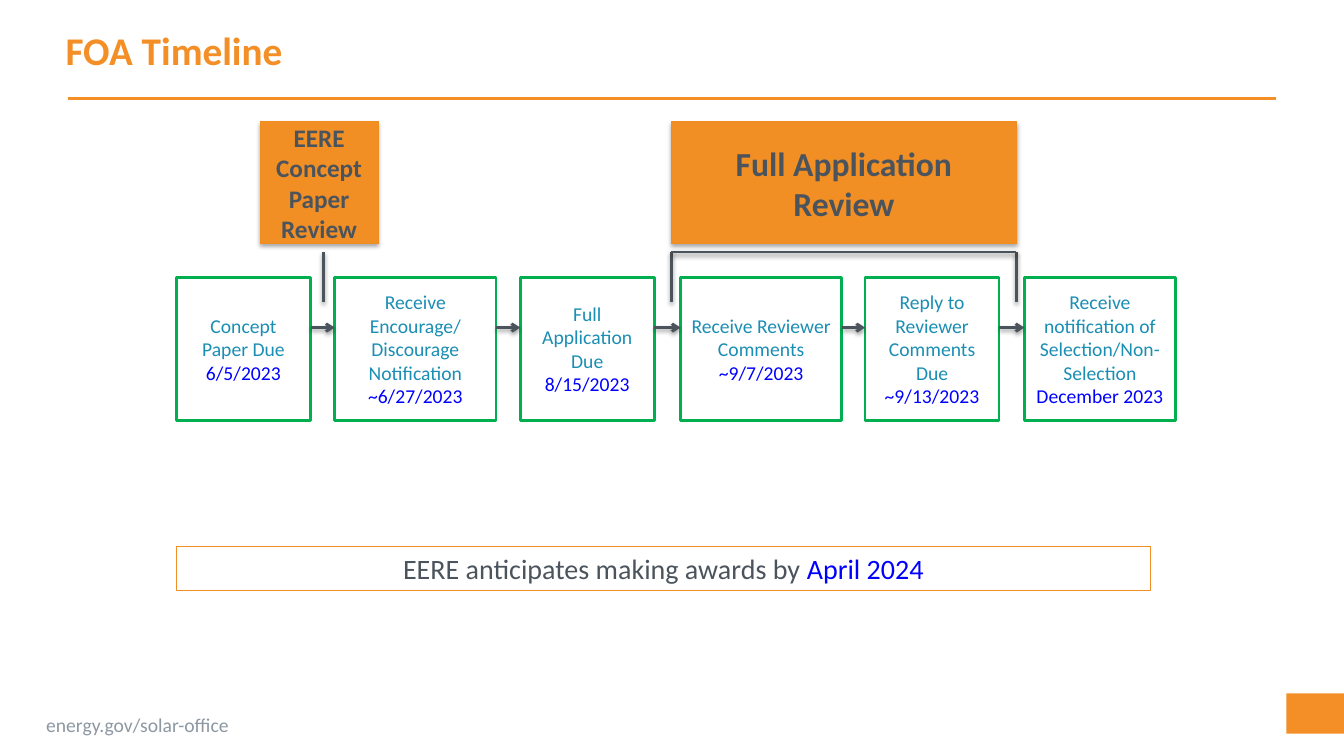
from dataclasses import dataclass
from itertools import pairwise

from lxml.etree import SubElement
from pptx import Presentation
from pptx.dml.color import RGBColor
from pptx.enum.shapes import MSO_CONNECTOR as Connector, MSO_SHAPE as Shape
from pptx.enum.text import MSO_ANCHOR as Anchor, MSO_AUTO_SIZE as AutoSize, PP_ALIGN as Align
from pptx.oxml.ns import qn
from pptx.util import Emu, Pt

PX = 9144


@dataclass(frozen=True)
class Theme:
    """Colours, type sizes and line widths of the slide."""
    font: str = "Calibri"
    orange: str = "F38F26"
    phase_fill: str = "F18F25"
    phase_line: str = "F18C1F"
    slate: str = "4B545D"
    grey: str = "8D98A3"
    teal: str = "1B8EB4"
    green: str = "00B050"
    date: str = "0000FF"
    white: str = "FFFFFF"
    title_size: int = 28
    major_size: int = 24
    award_size: int = 20
    minor_size: int = 18
    body_size: int = 14
    thick: float = 2
    thin: float = 0.75


class TimelineSlide:
    """Draws the elements of a timeline on one slide."""

    def __init__(self, presentation, theme):
        """Add a title-only slide."""
        self.theme = theme
        self.slide = presentation.slides.add_slide(presentation.slide_layouts[5])

    def colour(self, name):
        """Look up a theme colour."""
        return RGBColor.from_string(getattr(self.theme, name))

    def style(self, run, size, colour, bold=False):
        """Format one run."""
        run.font.name = self.theme.font
        run.font.size = Pt(size)
        run.font.bold = bold
        run.font.color.rgb = self.colour(colour)

    def fill_text(self, shape, paragraphs, size, bold=False, align=Align.CENTER, anchor=Anchor.MIDDLE):
        """Fill a shape with paragraphs of (text, colour) runs."""
        frame = shape.text_frame
        frame.word_wrap = True
        frame.auto_size = AutoSize.NONE
        frame.vertical_anchor = anchor
        for index, runs in enumerate(paragraphs):
            paragraph = frame.add_paragraph() if index else frame.paragraphs[0]
            paragraph.alignment = align
            for text, colour in runs:
                run = paragraph.add_run()
                run.text = text
                self.style(run, size, colour, bold)

    def title(self, text, left, top, width, height):
        """Place and fill the title placeholder."""
        shape = self.slide.shapes.title
        shape.left, shape.top = Emu(left * PX), Emu(top * PX)
        shape.width, shape.height = Emu(width * PX), Emu(height * PX)
        self.fill_text(shape, [[(text, "orange")]], self.theme.title_size, True, Align.LEFT, Anchor.TOP)

    def label(self, text, left, top, width, height):
        """Add a small grey line of text."""
        bounds = [Emu(length * PX) for length in (left, top, width, height)]
        shape = self.slide.shapes.add_textbox(*bounds)
        self.fill_text(shape, [[(text, "grey")]], self.theme.body_size, align=Align.LEFT, anchor=Anchor.TOP)
        shape.text_frame.word_wrap = False

    def box(self, left, top, width, height, fill=None, line=None, line_width=0, shadow=0):
        """Add a rectangle."""
        bounds = [Emu(length * PX) for length in (left, top, width, height)]
        shape = self.slide.shapes.add_shape(Shape.RECTANGLE, *bounds)
        if fill:
            shape.fill.solid()
            shape.fill.fore_color.rgb = self.colour(fill)
        else:
            shape.fill.background()
        if line:
            shape.line.color.rgb = self.colour(line)
            shape.line.width = Pt(line_width)
        else:
            shape.line.fill.background()
        shape.shadow.inherit = False
        if shadow:
            self.shade(shape.element.spPr.find(qn("a:effectLst")), shadow)
        return shape

    def shade(self, effects, opacity):
        """Add a soft shadow falling straight down."""
        outer = SubElement(effects, qn("a:outerShdw"), blurRad="40000", dist="20000",
                           dir="5400000", rotWithShape="0")
        black = SubElement(outer, qn("a:srgbClr"), val="000000")
        SubElement(black, qn("a:alpha"), val=str(opacity * 1000))

    def line(self, start, end, colour="slate", shadow=38, arrow=False):
        """Add a straight line, with an arrowhead if asked."""
        points = [Emu(length * PX) for length in (*start, *end)]
        connector = self.slide.shapes.add_connector(Connector.STRAIGHT, *points)
        connector.line.color.rgb = self.colour(colour)
        connector.line.width = Pt(self.theme.thick)
        properties = connector.element.spPr
        if arrow:
            SubElement(properties.find(qn("a:ln")), qn("a:tailEnd"), type="arrow")
        effects = SubElement(properties, qn("a:effectLst"))
        if shadow:
            self.shade(effects, shadow)

    def step(self, left, width, lines, date):
        """Add one milestone with its date."""
        shape = self.box(left, 275, width, 142, "white", "green", self.theme.thick)
        paragraphs = [[(text, "teal")] for text in lines] + [[(date, "date")]]
        self.fill_text(shape, paragraphs, self.theme.body_size)

    def phase(self, left, width, lines, size):
        """Add a review phase heading."""
        shape = self.box(left, 121, width, 121, "phase_fill", "phase_line", self.theme.thin, 35)
        self.fill_text(shape, [[(text, "slate")] for text in lines], size, True)


STEPS = [
    (175, 133, ["Concept Paper Due"], "6/5/2023"),
    (332, 160, ["Receive Encourage/ Discourage Notification"], "~6/27/2023"),
    (516, 133, ["Full Application Due"], "8/15/2023"),
    (675, 160, ["Receive Reviewer Comments"], "~9/7/2023"),
    (858, 133, ["Reply to Reviewer Comments", "Due"], "~9/13/2023"),
    (1016, 150, ["Receive notification of Selection/Non-Selection"], "December 2023"),
]


def main():
    """Build and save the slide."""
    presentation = Presentation()
    presentation.slide_width, presentation.slide_height = Emu(1333 * PX), Emu(750 * PX)
    theme = Theme()
    timeline = TimelineSlide(presentation, theme)

    timeline.line((67, 98), (1266, 98), "orange", shadow=0)
    timeline.box(1276, 688, 57, 40, "orange")
    timeline.label("energy.gov/solar-office", 36, 702, 204, 34)
    timeline.title("FOA Timeline", 55, 21, 850, 75)

    for step in STEPS:
        timeline.step(*step)
    for (left, width, *_), (following, *_) in pairwise(STEPS):
        timeline.line((left + width, 325), (following, 325), arrow=True)

    timeline.phase(258, 117, ["EERE", "Concept Paper Review"], theme.minor_size)
    timeline.phase(666, 342, ["Full Application Review"], theme.major_size)
    for x in (321, 666, 1008):
        timeline.line((x, 250), (x, 300))
    timeline.line((666, 250), (1008, 250))

    award = timeline.box(175, 542, 966, 44, line="phase_fill", line_width=theme.thin)
    runs = [("EERE anticipates making awards by ", "slate"), ("April 2024", "date")]
    timeline.fill_text(award, [runs], theme.award_size)

    presentation.save("out.pptx")


if __name__ == "__main__":
    main()
